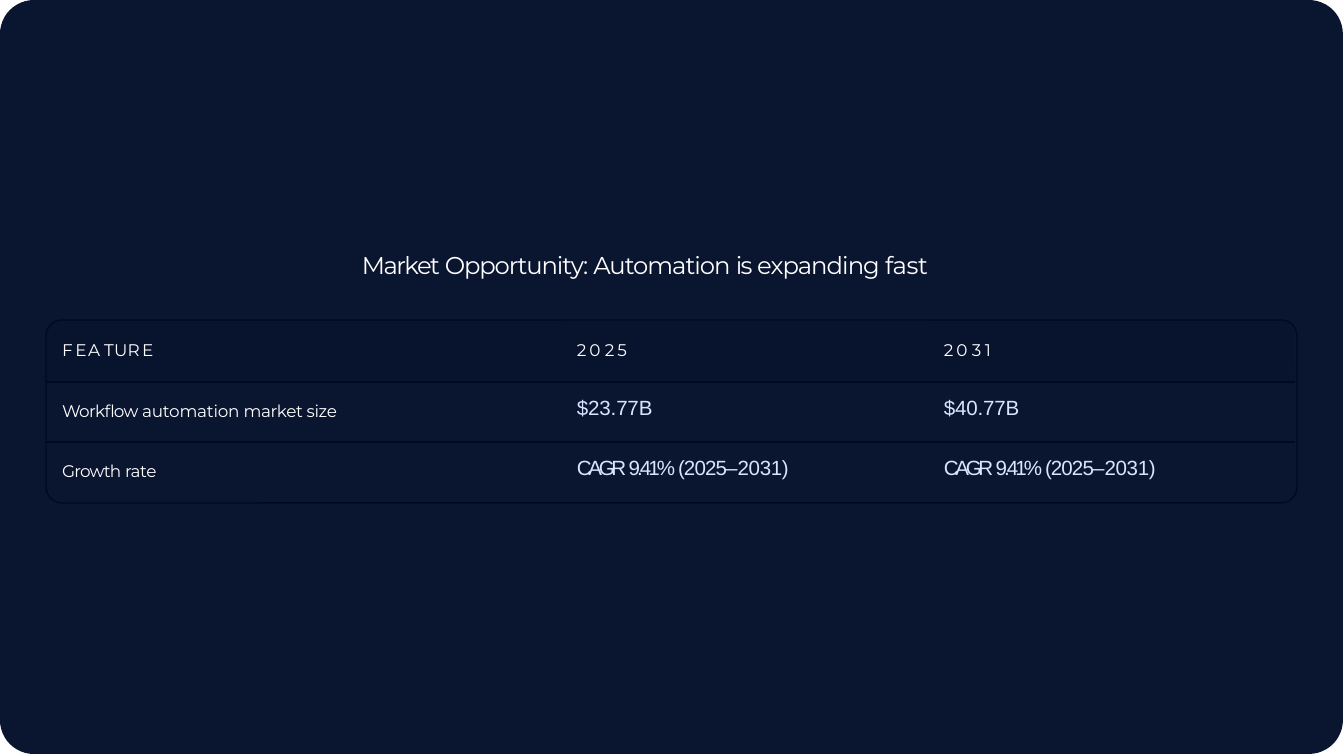
from lxml import etree
from pptx import Presentation
from pptx import util as u
from pptx.dml import color
from pptx.enum import shapes
from pptx.oxml import ns

EMU_PER_PX = 914400 / 134.5
COLORS = {"navy": "0A152F", "ink": "000825", "white": "FFFFFF", "ice": "DAE3FF"}
NO_TABLE_STYLE = "{2D5ABB26-0587-4C30-8999-92F81FD0307C}"
TINT = 12

TITLE = [("Market ", -0.8), ("Opportunity: ", -0.6), ("Automation ", -0.5),
         ("is ", -0.9), ("expanding ", -0.5), ("fast", -0.2)]
GROWTH = [("CAGR ", -1.8), ("9.41% ", -1.6), ("(2025–", -0.5), ("2031)", -0.2)]
# Each run is a pair: wording, letter spacing in points.
MARKET_ROWS = [
    [[("F ", -0.9), ("E ", -1.6), ("A ", -0.2), ("T U R ", -1.1), ("E", -0.5)],
     [("2 ", -0.8), ("0 ", 0), ("2 ", -0.8), ("5", -0.5)],
     [("2 ", -0.8), ("0 ", 0), ("3 ", -0.5), ("1", -3)]],
    [[("Workflow ", -0.3), ("automation ", -0.1), ("market size", -0.2)],
     [("$23.77B", -0.1)],
     [("$40.77B", -0.1)]],
    [[("Growth ", -0.4), ("rate", -0.2)], GROWTH, GROWTH],
]
COLUMNS = [515, 367, 367]
ROWS = [61, 60, 42]
TABLE_LEFT, TABLE_TOP = 46, 321
CORNER = 16


def px(length):
    return u.Emu(round(length * EMU_PER_PX))


def write_text(frame, runs, size=9, font="Montserrat", ink="white"):
    paragraph = frame.paragraphs[0]
    for wording, spacing in runs:
        run = paragraph.add_run()
        run.text = wording
        run.font.size = u.Pt(size)
        run.font.name = font
        run.font.color.rgb = color.RGBColor.from_string(COLORS[ink])
        run.font._element.set("spc", str(round(spacing * 100)))


def paint(fill, name, opacity=100):
    fill.solid()
    fill.fore_color.rgb = color.RGBColor.from_string(COLORS[name])
    if opacity < 100:
        swatch = fill._xPr.find(".//" + ns.qn("a:srgbClr"))
        etree.SubElement(swatch, ns.qn("a:alpha")).set("val", str(opacity * 1000))


class MarketSlide:
    def __init__(self, width, height):
        self.deck = Presentation()
        self.deck.slide_width, self.deck.slide_height = px(width), px(height)
        self.slide = self.deck.slides.add_slide(self.deck.slide_layouts[6])

    def panel(self, kind, left, top, width, height, radius,
              fill=None, opacity=100, line=None, mirrored=False):
        panel = self.slide.shapes.add_shape(
            kind, px(left), px(top), px(width), px(height))
        panel.shadow.inherit = False
        panel.adjustments[0] = radius / min(width, height)
        if fill:
            paint(panel.fill, fill, opacity)
        else:
            panel.fill.background()
        if line:
            paint(panel.line.fill, line)
            panel.line.width = u.Pt(0.75)
        else:
            panel.line.fill.background()
        if mirrored:
            panel._element.spPr.find(ns.qn("a:xfrm")).set("flipH", "1")

    def title(self, runs, left, top, width, height):
        frame = self.slide.shapes.add_textbox(
            px(left), px(top), px(width), px(height)).text_frame
        frame.word_wrap = True
        frame.margin_left = frame.margin_top = px(1)
        frame.margin_right = frame.margin_bottom = 0
        write_text(frame, runs, size=13)

    def rule(self, cell, side, position):
        """Draw one border; position keeps borders ahead of the cell fill."""
        border = etree.Element(ns.qn("a:" + side), w=str(u.Pt(0.75)))
        solid = etree.SubElement(border, ns.qn("a:solidFill"))
        etree.SubElement(solid, ns.qn("a:srgbClr")).set("val", COLORS["ink"])
        cell._tc.get_or_add_tcPr().insert(position, border)

    def table(self, rows, left, top, widths, heights):
        holder = self.slide.shapes.add_table(
            len(rows), len(widths), px(left), px(top),
            px(sum(widths)), px(sum(heights)))
        table = holder.table
        table.first_row = table.horz_banding = False
        table._tbl.tblPr.find(ns.qn("a:tableStyleId")).text = NO_TABLE_STYLE
        for column, width in zip(table.columns, widths):
            column.width = px(width)
        for r, (row, height) in enumerate(zip(rows, heights)):
            table.rows[r].height = px(height)
            for c, runs in enumerate(row):
                cell = table.cell(r, c)
                is_value = r > 0 and c > 0
                cell.margin_left = px(16)
                cell.margin_top = px(15 if is_value else 19)
                cell.margin_right = cell.margin_bottom = 0
                if (r, c) == (0, 1):
                    paint(cell.fill, "ink", TINT)
                else:
                    cell.fill.background()
                sides = ["lnT"] * (r > 0) + ["lnB"] * (r < len(rows) - 1)
                for position, side in enumerate(sides):
                    self.rule(cell, side, position)
                look = {"size": 11, "font": "Arial", "ink": "ice"} if is_value else {}
                write_text(cell.text_frame, runs, **look)


def main():
    market = MarketSlide(1344, 755)
    rounded = shapes.MSO_SHAPE.ROUNDED_RECTANGLE
    one_corner = shapes.MSO_SHAPE.ROUND_1_RECTANGLE
    table_width = sum(COLUMNS)

    market.panel(rounded, 0, 0, 1343, 754, 34, fill="navy")
    market.title(TITLE, 361, 249, 620, 32)
    market.panel(rounded, TABLE_LEFT, 320, table_width + 2, 183, CORNER, line="ink")
    market.panel(one_corner, TABLE_LEFT, TABLE_TOP, COLUMNS[0], ROWS[0], CORNER,
                 fill="ink", opacity=TINT, mirrored=True)
    market.panel(one_corner, TABLE_LEFT + table_width - COLUMNS[2], TABLE_TOP,
                 COLUMNS[2], ROWS[0], CORNER, fill="ink", opacity=TINT)
    market.table(MARKET_ROWS, TABLE_LEFT, TABLE_TOP, COLUMNS, ROWS)
    market.deck.save("out.pptx")


if __name__ == "__main__":
    main()
